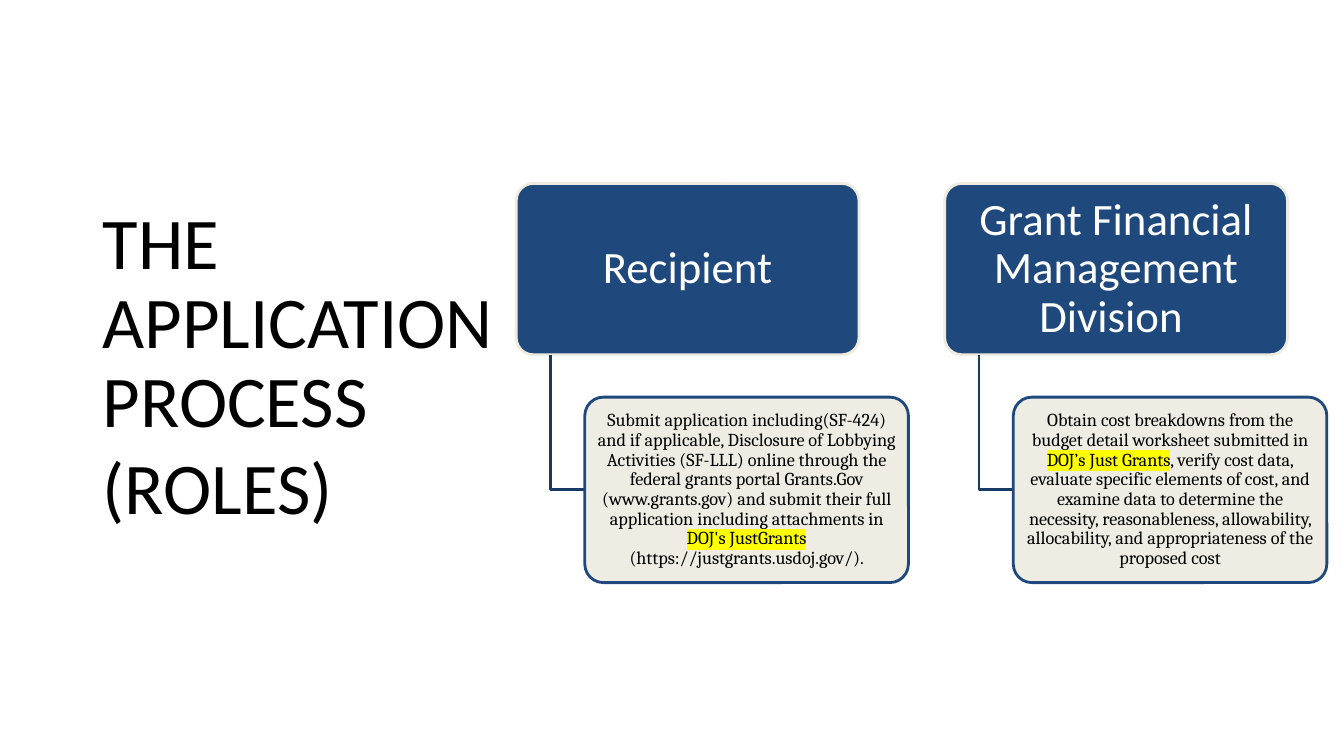
from lxml import etree
from pptx import Presentation
from pptx import util as u
from pptx.dml.color import RGBColor
from pptx.enum import shapes, text
from pptx.oxml import ns

PX = 9144
NAVY = RGBColor(0x1F, 0x49, 0x7D)
STEM = RGBColor(0x19, 0x3A, 0x64)
CREAM = RGBColor(0xEE, 0xEC, 0xE1)
WHITE = RGBColor(0xFF, 0xFF, 0xFF)
BLACK = RGBColor(0, 0, 0)
MARK = "FFFF00"

ROLES = [
    (512, 321, "Recipient", [
        ("Submit application including(SF-424) and if applicable, Disclosure of "
         "Lobbying Activities (SF-LLL) online through the federal grants portal "
         "Grants.Gov (www.grants.gov) and submit their full application including "
         "attachments in ", False),
        ("DOJ's JustGrants ", True),
        ("(https://justgrants.usdoj.gov/).", False)]),
    (937, 311, "Grant Financial Management Division ", [
        ("Obtain cost breakdowns from the budget detail worksheet submitted in ", False),
        ("DOJ’s Just Grants", True),
        (", verify cost data, evaluate specific elements of cost, and examine data "
         "to determine the necessity, reasonableness, allowability, allocability, "
         "and appropriateness of the proposed cost", False)]),
]


def style(para, font, size, color):
    para.line_spacing = 0.9
    para.font.name = font
    para.font.size = u.Pt(size)
    para.font.color.rgb = color


def add_runs(para, runs):
    for words, marked in runs:
        run = para.add_run()
        run.text = words
        if marked:
            props = run._r.get_or_add_rPr()
            light = etree.SubElement(props, ns.qn("a:highlight"))
            etree.SubElement(light, ns.qn("a:srgbClr"), val=MARK)


def add_title(slide, left, top, width, height):
    box = slide.shapes.add_textbox(left * PX, top * PX, width * PX, height * PX)
    frame = box.text_frame
    frame.word_wrap = True
    frame.vertical_anchor = text.MSO_ANCHOR.MIDDLE
    frame.text = "THE APPLICATION PROCESS\n(ROLES)"
    for para in frame.paragraphs:
        style(para, "Calibri", 52, BLACK)
        para.space_after = u.Pt(6)


def add_card(slide, box, fill, line, pads, runs, font, size, color):
    card = slide.shapes.add_shape(
        shapes.MSO_SHAPE.ROUNDED_RECTANGLE, *(n * PX for n in box))
    card.shadow.inherit = False
    card.adjustments[0] = 0.1
    card.fill.solid()
    card.fill.fore_color.rgb = fill
    card.line.color.rgb = line
    card.line.width = u.Pt(2)
    frame = card.text_frame
    frame.word_wrap = True
    frame.vertical_anchor = text.MSO_ANCHOR.MIDDLE
    frame.margin_left = frame.margin_right = pads[0] * PX
    frame.margin_top = frame.margin_bottom = pads[1] * PX
    para = frame.paragraphs[0]
    para.alignment = text.PP_ALIGN.CENTER
    add_runs(para, runs)
    style(para, font, size, color)
    return card


def add_stem(slide, left, top, width, height):
    pen = slide.shapes.build_freeform(left, top, scale=PX)
    pen.add_line_segments(
        [(left, top + height), (left + width, top + height)], close=False)
    stem = pen.convert_to_shape()
    stem.shadow.inherit = False
    stem.fill.background()
    stem.line.color.rgb = STEM
    stem.line.width = u.Pt(2)


def add_role(slide, left, top, wide, name, runs):
    add_card(slide, (left, top, 340, 170), NAVY, CREAM, (7, 4),
             [(name, False)], "Calibri", 32, WHITE)
    add_stem(slide, left + 34, top + 170, 34, 134)
    note = add_card(slide, (left + 68, top + 212, wide, 184), CREAM, NAVY, (3, 2),
                    runs, "Cambria", 13, BLACK)
    tint = note.fill._xPr.find(ns.qn("a:solidFill"))[0]
    etree.SubElement(tint, ns.qn("a:alpha"), val="90000")


def main():
    deck = Presentation()
    deck.slide_width = 1333 * PX
    deck.slide_height = 750 * PX
    slide = deck.slides.add_slide(deck.slide_layouts[6])
    add_title(slide, 92, 61, 532, 609)
    for left, wide, name, runs in ROLES:
        add_role(slide, left, 182, wide, name, runs)
    deck.save("out.pptx")


if __name__ == "__main__":
    main()
